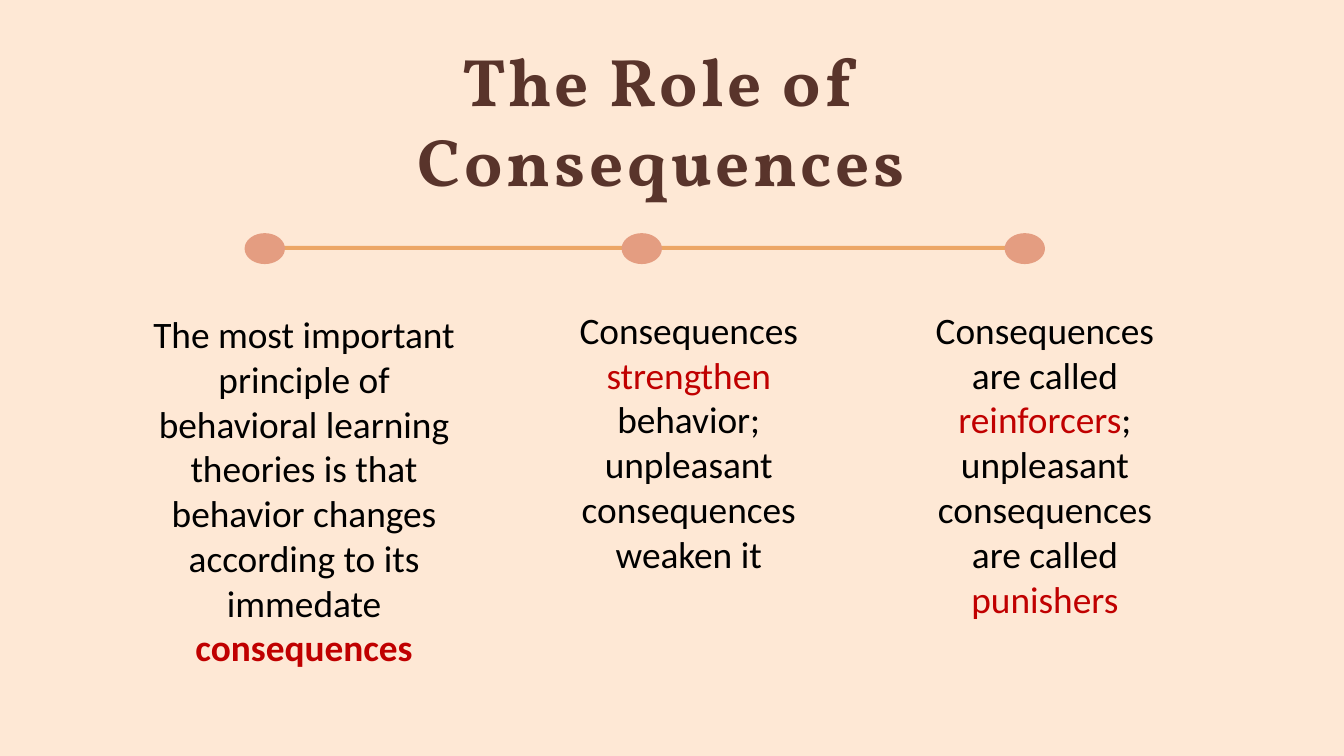
from math import cos, pi, sin

from pptx import Presentation
from pptx import util as u
from pptx.dml.color import RGBColor
from pptx.enum import shapes, text

CREAM = RGBColor(0xFE, 0xE8, 0xD5)
AMBER = RGBColor(0xEC, 0xA6, 0x66)
CORAL = RGBColor(0xE4, 0x9D, 0x81)
BROWN = RGBColor(0x59, 0x34, 0x2B)
BLACK = RGBColor(0, 0, 0)
RED = RGBColor(0xC0, 0, 0)


class Deck:
    def __init__(self, wide, high):
        self.prs = Presentation()
        self.prs.slide_width = u.Inches(wide)
        self.prs.slide_height = u.Inches(high)
        self.slide = self.prs.slides.add_slide(self.prs.slide_layouts[6])

    def paint(self, form, color):
        form.shadow.inherit = False
        form.fill.solid()
        form.fill.fore_color.rgb = color
        form.line.fill.background()

    def rect(self, box, color):
        form = self.slide.shapes.add_shape(
            shapes.MSO_SHAPE.RECTANGLE, *map(u.Inches, box))
        self.paint(form, color)

    def dots(self, mids, y, rx, ry, color, steps=36):
        """Draw a row of ellipses as one outline."""
        build = None
        for x in mids:
            ring = [(u.Inches(x + rx * cos(2 * pi * i / steps)),
                     u.Inches(y + ry * sin(2 * pi * i / steps)))
                    for i in range(steps)]
            if build:
                build.move_to(*ring[0])
            else:
                build = self.slide.shapes.build_freeform(*ring[0])
            build.add_line_segments(ring[1:], close=True)
        self.paint(build.convert_to_shape(), color)

    def text(self, box, paras, top=0.13, font="Calibri", size=40, track=0):
        """Add centred paragraphs, each a list of (words, colour, bold) runs."""
        frame = self.slide.shapes.add_textbox(*map(u.Inches, box)).text_frame
        frame.word_wrap = True
        frame.vertical_anchor = text.MSO_ANCHOR.TOP
        frame.margin_left = frame.margin_right = frame.margin_bottom = 0
        frame.margin_top = u.Inches(top)
        for i, runs in enumerate(paras):
            para = frame.add_paragraph() if i else frame.paragraphs[0]
            para.alignment = text.PP_ALIGN.CENTER
            for words, color, bold in runs:
                run = para.add_run()
                run.text = words
                run.font.name = font
                run.font.size = u.Pt(size)
                run.font.bold = bold
                run.font.color.rgb = color
                if track:
                    run.font._element.set("spc", str(track * 100))


def main():
    deck = Deck(20, 11.25)
    deck.rect((0, 0, 20, 11.25), CREAM)
    deck.rect((4.06, 3.66, 10.98, 0.06), AMBER)
    deck.dots((3.94, 9.55, 15.25), 3.7, 0.3, 0.23, CORAL)

    deck.text((8.53, 4.44, 3.44, 4.16), [
        [("Consequences", BLACK, False)],
        [("strengthen ", RED, False),
         ("behavior; unpleasant consequences weaken it", BLACK, False)],
    ])
    deck.text((2.08, 3.83, 4.89, 6.19), [
        [("The most important principle of behavioral learning "
          "theories is that", BLACK, False)],
        [("behavior changes according to its immedate ", BLACK, False),
         ("consequences", RED, True)],
    ], top=0.8)
    deck.text((13.83, 4.44, 3.44, 4.84), [
        [("Consequences are called ", BLACK, False),
         ("reinforcers", RED, False),
         ("; unpleasant consequences are called ", BLACK, False),
         ("punishers", RED, False)],
    ])
    deck.text((5.11, 0.2, 9.47, 2.8),
              [[("The Role of Consequences", BROWN, True)]],
              top=0.38, font="Vollkorn", size=72, track=4)

    deck.prs.save("out.pptx")


if __name__ == "__main__":
    main()
